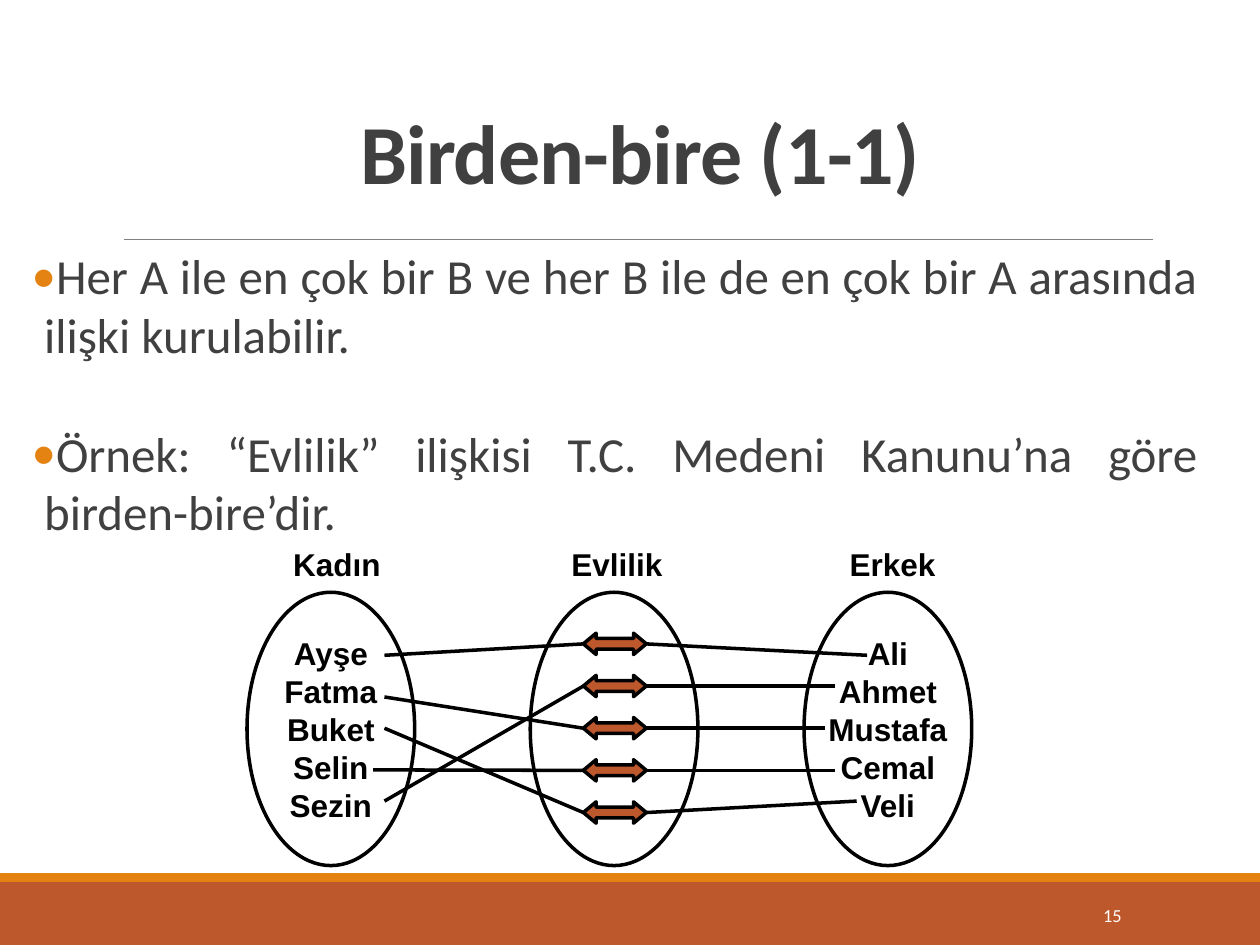
from lxml.etree import SubElement
from pptx import Presentation
from pptx.dml.color import RGBColor
from pptx.enum.shapes import MSO_CONNECTOR, MSO_SHAPE
from pptx.enum.text import MSO_ANCHOR, MSO_AUTO_SIZE, PP_ALIGN
from pptx.oxml import parse_xml
from pptx.oxml.ns import nsdecls, qn
from pptx.util import Cm, Pt


def color(fmt, value):
    if hasattr(fmt, "solid"):
        fmt.solid()
        fmt = fmt.fore_color
    else:
        fmt = fmt.color
    fmt.rgb = RGBColor.from_string(value)


def style(p, size, name, value, bold=False, align=PP_ALIGN.CENTER):
    p.alignment = align
    p.font.size = Pt(size)
    p.font.name = name
    p.font.bold = bold
    color(p.font, value)
    return p._p.pPr.find(qn("a:defRPr"))


prs = Presentation()
prs.slide_width, prs.slide_height = Cm(25.4), Cm(19.05)
s = prs.slides.add_slide(prs.slide_layouts[1])

for top, height, fill in [(17.78, 1.27, "BD582C"), (17.6, 0.18, "E48312")]:
    sp = s.shapes.add_shape(MSO_SHAPE.RECTANGLE, 0, Cm(top), prs.slide_width, Cm(height))
    sp.shadow.inherit = False
    color(sp.fill, fill)
    sp.line.fill.background()

title = s.shapes.title
title.left, title.top, title.width, title.height = Cm(2.51), Cm(1.83), Cm(20.78), Cm(2.36)
tf = title.text_frame
tf.text = "Birden-bire (1-1)"
tf.auto_size = MSO_AUTO_SIZE.NONE
tf.vertical_anchor = MSO_ANCHOR.BOTTOM
p = tf.paragraphs[0]
p.line_spacing = 0.85
style(p, 48, "Calibri", "404040", True).set("spc", "-50")

body = s.placeholders[1]
body.left, body.top, body.width, body.height = Cm(0.64), Cm(4.83), Cm(23.5), Cm(6.55)
tf = body.text_frame
tf.text = (
    "Her A ile en çok bir B ve her B ile de en çok bir A arasında ilişki kurulabilir.\n"
    "Örnek: “Evlilik” ilişkisi T.C. Medeni Kanunu’na göre birden-bire’dir."
)
tf.auto_size = MSO_AUTO_SIZE.NONE
tf.margin_left = tf.margin_right = 0
for p, gap in zip(tf.paragraphs, (0, 34)):
    p.space_before = Pt(gap)
    rpr = style(p, 28, "Calibri", "404040", align=PP_ALIGN.JUSTIFY)
    ppr = p._p.pPr
    ppr.set("marL", str(Cm(0.25)))
    ppr.set("indent", str(Cm(-0.25)))
    rpr.addprevious(parse_xml(f'<a:buClr {nsdecls("a")}><a:srgbClr val="E48312"/></a:buClr>'))
    rpr.addprevious(parse_xml(f'<a:buFont {nsdecls("a")} typeface="Calibri"/>'))
    rpr.addprevious(parse_xml(f'<a:buChar {nsdecls("a")} char="•"/>'))

women = ["Ayşe", "Fatma", "Buket", "Selin", "Sezin"]
men = ["Ali", "Ahmet", "Mustafa", "Cemal", "Veli"]
for left, names in [(10.69, []), (16.21, men), (4.98, women)]:
    sp = s.shapes.add_shape(MSO_SHAPE.OVAL, Cm(left), Cm(11.94), Cm(3.38), Cm(5.51))
    sp.shadow.inherit = False
    sp.fill.background()
    color(sp.line, "000000")
    sp.line.width = Pt(2)
    if names:
        tf = sp.text_frame
        tf.text = "\n".join(names)
        tf.word_wrap = False
        tf.vertical_anchor = MSO_ANCHOR.MIDDLE
        for p in tf.paragraphs:
            style(p, 18, "Arial", "000000", True)

tf = s.shapes.add_textbox(Cm(5.66), Cm(10.87), Cm(13.46), Cm(1.02)).text_frame
tf.text = "Kadın\tEvlilik\tErkek"
tf.word_wrap = False
rpr = style(tf.paragraphs[0], 18, "Arial", "000000", True, PP_ALIGN.LEFT)
tabs = parse_xml(f'<a:tabLst {nsdecls("a")}/>')
for pos in (5.61, 11.22):
    SubElement(tabs, qn("a:tab"), pos=str(Cm(pos)), algn="l")
rpr.addprevious(tabs)

arrow_left, arrow_width, arrow_height = 11.76, 1.27, 0.43
arrow_right = arrow_left + arrow_width
arrow_ys = [12.98 + 0.85 * i for i in range(5)]
women_ends = [(7.75, 13.21, 0), (7.75, 14.05, 2), (7.75, 14.68, 4), (7.52, 15.52, 3), (7.75, 16.15, 1)]
men_ends = [(17.48, 13.21), (16.84, arrow_ys[1]), (16.64, arrow_ys[2]), (16.84, arrow_ys[3]), (17.27, 16.15)]

lines = [(2.49, 4.83, 23.24, 4.83, "808080", 0.5)]
lines += [(arrow_left, arrow_ys[i], x, y, "000000", 2) for x, y, i in women_ends]
lines += [(x, y, arrow_right, ay, "000000", 2) for (x, y), ay in zip(men_ends, arrow_ys)]
for x1, y1, x2, y2, value, width in lines:
    cn = s.shapes.add_connector(MSO_CONNECTOR.STRAIGHT, Cm(x1), Cm(y1), Cm(x2), Cm(y2))
    color(cn.line, value)
    cn.line.width = Pt(width)
    SubElement(cn._element.spPr, qn("a:effectLst"))

for y in arrow_ys:
    sp = s.shapes.add_shape(MSO_SHAPE.LEFT_RIGHT_ARROW, Cm(arrow_left), Cm(y - arrow_height / 2),
                            Cm(arrow_width), Cm(arrow_height))
    sp.adjustments[0], sp.adjustments[1] = 0.5, 0.6
    sp.shadow.inherit = False
    color(sp.fill, "BD582C")
    color(sp.line, "000000")
    sp.line.width = Pt(2)

tf = s.shapes.add_textbox(Cm(20.62), Cm(17.93), Cm(2.24), Cm(1.02)).text_frame
tf.text = "15"
tf.word_wrap = True
tf.vertical_anchor = MSO_ANCHOR.MIDDLE
style(tf.paragraphs[0], 10.5, "Calibri", "FFFFFF", align=PP_ALIGN.RIGHT)

prs.save("out.pptx")
